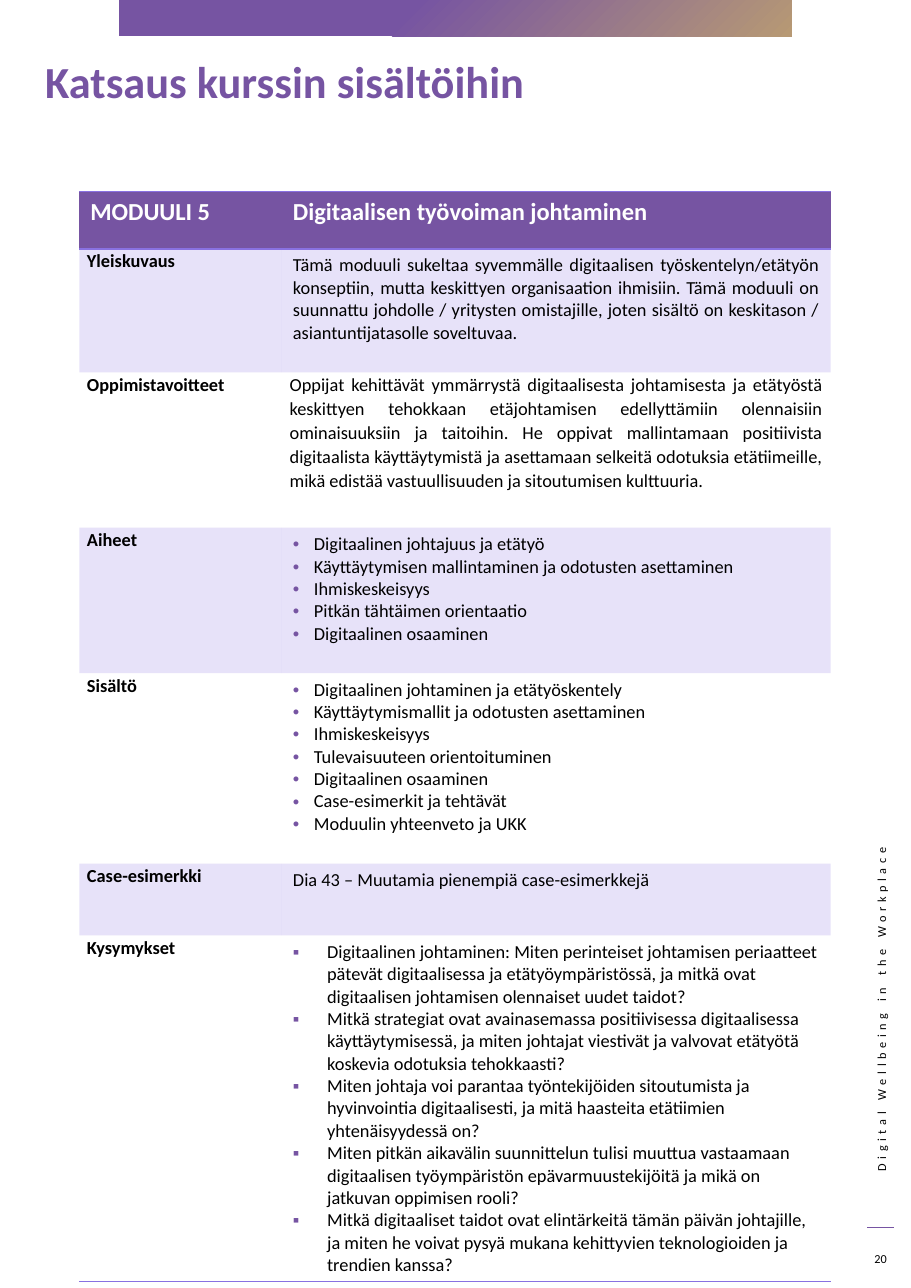
from lxml import etree
from pptx import Presentation
from pptx.dml.color import RGBColor
from pptx.enum.shapes import MSO_CONNECTOR, MSO_SHAPE
from pptx.enum.text import MSO_ANCHOR, MSO_AUTO_SIZE, PP_ALIGN
from pptx.oxml.ns import qn
from pptx.util import Inches, Pt

LEFT, CENTER, RIGHT, JUST = PP_ALIGN.LEFT, PP_ALIGN.CENTER, PP_ALIGN.RIGHT, PP_ALIGN.JUSTIFY
TOP, MIDDLE = MSO_ANCHOR.TOP, MSO_ANCHOR.MIDDLE
NO_FIT = MSO_AUTO_SIZE.NONE
RECT, STRAIGHT = MSO_SHAPE.RECTANGLE, MSO_CONNECTOR.STRAIGHT

PURPLE, LILAC, GOLD = "7654A2", "8971E1", "B79974"
BLACK, WHITE = "000000", "FFFFFF"
PLAIN_GRID = "{2D5ABB26-0587-4C30-8999-92F81FD0307C}"
TIGHT = dict(margin_left=Inches(0.07), margin_right=Inches(0.07),
             margin_top=0, margin_bottom=0)
LOOSE = dict(line_spacing=1.07, space_after=Pt(8))

HEAD = ("MODUULI 5", "Digitaalisen työvoiman johtaminen")
# label, row height, kind of body, body paragraphs
ROWS = [
    ("Yleiskuvaus", 1.12, "text", [
        "Tämä moduuli sukeltaa syvemmälle digitaalisen työskentelyn/etätyön konseptiin, mutta keskittyen organisaation ihmisiin. Tämä moduuli on suunnattu johdolle / yritysten omistajille, joten sisältö on keskitason / asiantuntijatasolle soveltuvaa."]),
    ("Oppimistavoitteet", 1.41, "loose", [
        "Oppijat kehittävät ymmärrystä digitaalisesta johtamisesta ja etätyöstä keskittyen tehokkaan etäjohtamisen edellyttämiin olennaisiin ominaisuuksiin ja taitoihin. He oppivat mallintamaan positiivista digitaalista käyttäytymistä ja asettamaan selkeitä odotuksia etätiimeille, mikä edistää vastuullisuuden ja sitoutumisen kulttuuria."]),
    ("Aiheet", 1.32, "dots", [
        "Digitaalinen johtajuus ja etätyö",
        "Käyttäytymisen mallintaminen ja odotusten asettaminen",
        "Ihmiskeskeisyys",
        "Pitkän tähtäimen orientaatio",
        "Digitaalinen osaaminen"]),
    ("Sisältö", 1.73, "dots", [
        "Digitaalinen johtaminen ja etätyöskentely",
        "Käyttäytymismallit ja odotusten asettaminen",
        "Ihmiskeskeisyys",
        "Tulevaisuuteen orientoituminen",
        "Digitaalinen osaaminen",
        "Case-esimerkit ja tehtävät",
        "Moduulin yhteenveto ja UKK"]),
    ("Case-esimerkki", 0.65, "text", ["Dia 43 – Muutamia pienempiä case-esimerkkejä"]),
    ("Kysymykset", 3.14, "squares", [
        "Digitaalinen johtaminen: Miten perinteiset johtamisen periaatteet pätevät digitaalisessa ja etätyöympäristössä, ja mitkä ovat digitaalisen johtamisen olennaiset uudet taidot?",
        "Mitkä strategiat ovat avainasemassa positiivisessa digitaalisessa käyttäytymisessä, ja miten johtajat viestivät ja valvovat etätyötä koskevia odotuksia tehokkaasti?",
        "Miten johtaja voi parantaa työntekijöiden sitoutumista ja hyvinvointia digitaalisesti, ja mitä haasteita etätiimien yhtenäisyydessä on?",
        "Miten pitkän aikavälin suunnittelun tulisi muuttua vastaamaan digitaalisen työympäristön epävarmuustekijöitä ja mikä on jatkuvan oppimisen rooli?",
        "Mitkä digitaaliset taidot ovat elintärkeitä tämän päivän johtajille, ja miten he voivat pysyä mukana kehittyvien teknologioiden ja trendien kanssa?"]),
]
# paragraph format, cell format, bullet
KINDS = {
    "text": (dict(alignment=JUST), {}, None),
    "loose": (dict(alignment=JUST, **LOOSE), TIGHT, None),
    "dots": ({}, {}, ("•", 0.19)),
    "squares": ({}, {}, ("▪", 0.31)),
}


def put(thing, **vals):
    for name, val in vals.items():
        setattr(thing, name, val)


def paint(target, color):
    target.rgb = RGBColor.from_string(color)


def add(parent, tag, **attrs):
    return etree.SubElement(parent, qn(tag), attrs)


def write(frame, lines, size, color=BLACK, bold=False, bullet=None, **form):
    """Fill a text frame, one paragraph for each line."""
    for i, line in enumerate(lines):
        para = frame.add_paragraph() if i else frame.paragraphs[0]
        put(para, **form)
        run = para.add_run()
        run.text = line
        put(run.font, name="Calibri", size=Pt(size), bold=bold)
        paint(run.font.color, color)
        if bullet:
            mark, indent = bullet
            props = para._p.get_or_add_pPr()
            step = Inches(indent)
            props.set("marL", str(step))
            props.set("indent", str(-step))
            add(add(props, "a:buClr"), "a:srgbClr", val=PURPLE)
            add(props, "a:buFont", typeface="Arial")
            add(props, "a:buChar", char=mark)


def edge(cell, *sides):
    """Draw lilac borders; sides are named in reverse schema order."""
    for side in sides:
        line = etree.Element(qn("a:ln" + side), w=str(Pt(1)))
        add(add(line, "a:solidFill"), "a:srgbClr", val=LILAC)
        cell._tc.get_or_add_tcPr().insert(0, line)


def tint(cell, color, alpha=None):
    cell.fill.solid()
    paint(cell.fill.fore_color, color)
    if alpha:
        tone = cell._tc.tcPr.find(".//" + qn("a:srgbClr"))
        add(tone, "a:alpha", val=str(alpha * 1000))


def banner(slide, x, y, w, h):
    bar = slide.shapes.add_shape(RECT, *map(Inches, (x, y, w, h)))
    bar.shadow.inherit = False
    bar.line.fill.background()
    grad = etree.Element(qn("a:gradFill"), rotWithShape="1")
    stops = add(grad, "a:gsLst")
    for pos, color in ((0, GOLD), (58, PURPLE)):
        add(add(stops, "a:gs", pos=str(pos * 1000)), "a:srgbClr", val=color)
    ring = add(grad, "a:path", path="circle")
    add(ring, "a:fillToRect", l="100000", t="100000")
    bar._element.spPr.find(qn("a:prstGeom")).addnext(grad)


def title(slide, x, y, w, h):
    head = slide.shapes.title
    put(head, left=Inches(x), top=Inches(y), width=Inches(w), height=Inches(h))
    put(head.text_frame, vertical_anchor=TOP, auto_size=NO_FIT, word_wrap=True)
    write(head.text_frame, ["Katsaus kurssin sisältöihin"], 29, PURPLE, True,
          alignment=LEFT)


def label(slide, text, x, y, w, h, align, turn=0, gap=0):
    box = slide.shapes.add_textbox(*map(Inches, (x, y, w, h)))
    box.rotation = turn
    put(box.text_frame, word_wrap=True, vertical_anchor=MIDDLE)
    write(box.text_frame, [text], 8, alignment=align)
    if gap:
        run = box.text_frame.paragraphs[0].runs[0]
        run.font._element.set("spc", str(gap * 100))


def margin(slide, x, y, w, h):
    """Side strip: turned course name, short rule, page number."""
    mid, end = x + w / 2, y + h
    label(slide, "Digital Wellbeing in the Workplace",
          mid - 1.73, y + 1.61, 3.47, 0.24, RIGHT, 270, 3)
    rule = slide.shapes.add_connector(
        STRAIGHT, *map(Inches, (mid + 0.12, end - 0.43, mid - 0.12, end - 0.43)))
    paint(rule.line.color, PURPLE)
    rule.line.width = Pt(0.75)
    add(rule._element.spPr, "a:effectLst")
    label(slide, "20", x, end - 0.29, w, 0.29, CENTER)


def module(slide, x, y, w, h):
    heights = [0.52] + [row[1] for row in ROWS]
    grid = slide.shapes.add_table(
        len(heights), 2, *map(Inches, (x, y, w, h))).table
    grid._tbl.tblPr.find(qn("a:tableStyleId")).text = PLAIN_GRID
    grid.horz_banding = False
    for col, width in zip(grid.columns, (1.84, w - 1.84)):
        col.width = Inches(width)
    for row, height in zip(grid.rows, heights):
        row.height = Inches(height)
    for cell, text in zip(grid.rows[0].cells, HEAD):
        write(cell.text_frame, [text], 16, WHITE, True)
        tint(cell, PURPLE)
        edge(cell, "B", "T")
    for i, (name, _, kind, lines) in enumerate(ROWS, 1):
        key, body = grid.rows[i].cells
        form, inset, bullet = KINDS[kind]
        put(key, **TIGHT)
        put(body, **inset)
        write(key.text_frame, [name], 12, bold=True, **LOOSE)
        write(body.text_frame, lines, 12, bullet=bullet, **form)
        for cell in (key, body):
            if i % 2:
                tint(cell, LILAC, 20)
            if i == len(ROWS):
                edge(cell, "B")


def main():
    deck = Presentation()
    put(deck, slide_width=Inches(8.27), slide_height=Inches(11.69))
    slide = deck.slides.add_slide(deck.slide_layouts[5])
    banner(slide, 1.08, 0, 6.11, 0.33)
    title(slide, 0.31, 0.44, 7.11, 0.81)
    margin(slide, 7.8, 7.6, 0.39, 3.97)
    module(slide, 0.72, 1.74, 6.82, 9.89)
    deck.save("out.pptx")


if __name__ == "__main__":
    main()
